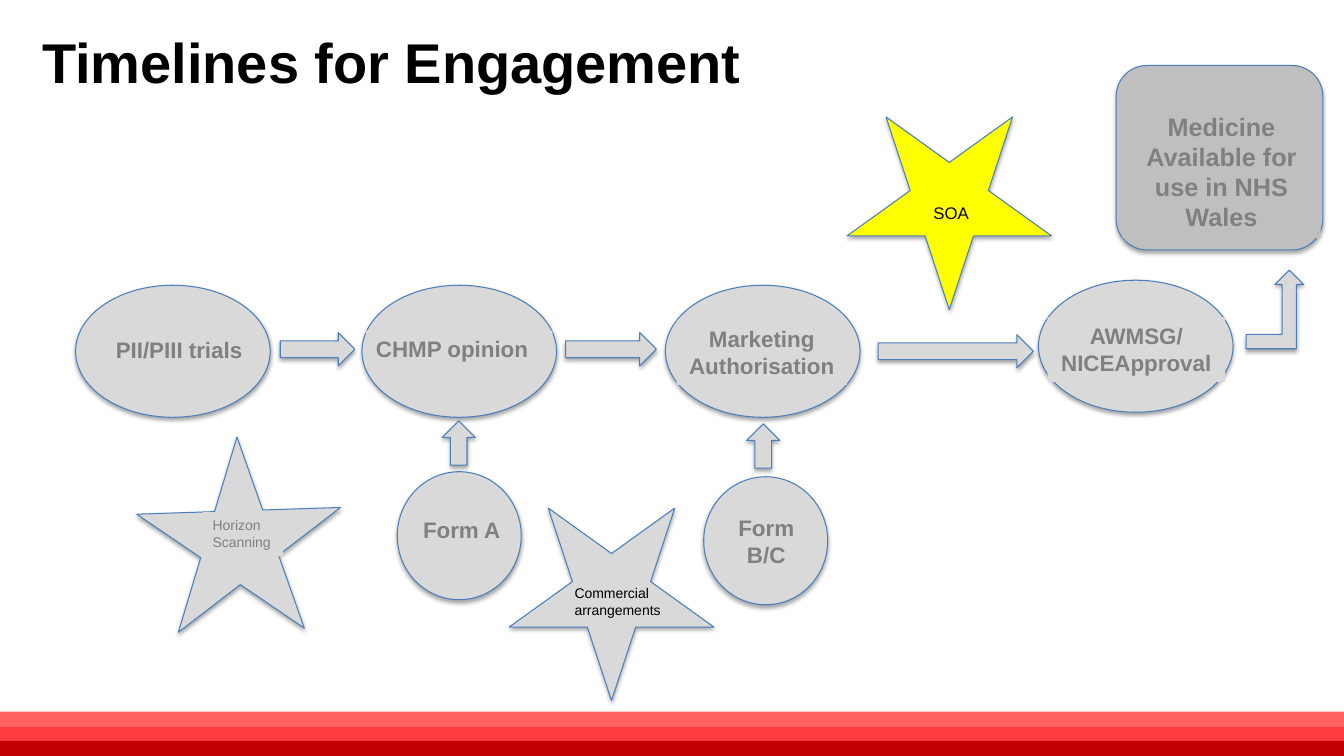
from dataclasses import dataclass
from lxml.etree import SubElement
from pptx import Presentation
from pptx.dml.color import RGBColor as Color
from pptx.enum.shapes import MSO_SHAPE as Kind
from pptx.enum.text import MSO_ANCHOR as Anchor, PP_ALIGN as Align
from pptx.oxml.ns import qn
from pptx.util import Inches, Pt


@dataclass(frozen=True)
class Theme:
    """Colours and type sizes of the slide."""
    font: str = "Arial"
    black: str = "000000"
    text: str = "808080"
    pale: str = "D9D9D9"
    grey: str = "BFBFBF"
    alert: str = "FFFF00"
    edge: str = "4B7EBC"
    bands: tuple = ("FF6161", "FF3F3F", "C00000")
    title: int = 40
    large: int = 18
    body: int = 16
    note: int = 12
    small: int = 10


class Board:
    """Draws styled elements on the current slide."""

    def __init__(self, slide, theme):
        self.shapes, self.theme = slide.shapes, theme

    def plain(self, kind, box, fill):
        shape = self.shapes.add_shape(kind, *map(Inches, box))
        shape.shadow.inherit = False
        shape.fill.solid()
        shape.fill.fore_color.rgb = Color.from_string(fill)
        shape.line.fill.background()
        return shape

    def form(self, kind, box, fill=None, turn=0):
        shape = self.plain(kind, box, fill or self.theme.pale)
        shape.line.color.rgb = Color.from_string(self.theme.edge)
        shape.line.width = Pt(0.75)
        shape.rotation = turn
        self.shade(shape)
        return shape

    def shade(self, shape):
        effect = shape._element.spPr.find(qn("a:effectLst"))
        shadow = SubElement(effect, qn("a:outerShdw"), blurRad=str(Pt(3.1)),
                            dist=str(Pt(1.8)), dir="5400000", rotWithShape="0")
        color = SubElement(shadow, qn("a:srgbClr"), val=self.theme.black)
        SubElement(color, qn("a:alpha"), val="35000")

    def label(self, text, box, size, fill=None, color=None, bold=True,
              align=Align.LEFT, anchor=Anchor.TOP):
        if fill:
            shape = self.plain(Kind.RECTANGLE, box, fill)
        else:
            shape = self.shapes.add_textbox(*map(Inches, box))
        frame = shape.text_frame
        frame.word_wrap = True
        frame.vertical_anchor = anchor
        frame.text = text
        for para in frame.paragraphs:
            para.alignment = align
            font = para.font
            font.name, font.size, font.bold = self.theme.font, Pt(size), bold
            font.color.rgb = Color.from_string(color or self.theme.text)


def main():
    """Build the engagement timeline."""
    deck = Presentation()
    deck.slide_width, deck.slide_height = Inches(13.33), Inches(7.5)
    theme = Theme()
    board = Board(deck.slides.add_slide(deck.slide_layouts[6]), theme)

    for row, fill in enumerate(theme.bands):
        board.plain(Kind.RECTANGLE, (0, 7.06 + 0.145 * row, 13.33, 0.15), fill)
    board.label("Timelines for Engagement", (0.32, 0.19, 7.16, 0.83),
                theme.title, color=theme.black, anchor=Anchor.MIDDLE)

    for left, top, fill, turn in ((1.42, 4.52, theme.pale, 142.4),
                                  (5.05, 5.04, theme.pale, 180),
                                  (8.4, 1.16, theme.alert, 180)):
        board.form(Kind.STAR_5_POINT, (left, top, 2.03, 1.91), fill, turn)
    for left, top in ((3.94, 4.68), (6.98, 4.73)):
        board.form(Kind.OVAL, (left, top, 1.23, 1.27))
    for left, top in ((0.75, 2.83), (3.59, 2.83), (6.6, 2.83), (10.3, 2.78)):
        board.form(Kind.OVAL, (left, top, 1.93, 1.31))
    board.form(Kind.ROUNDED_RECTANGLE, (11.07, 0.65, 2.05, 1.83), theme.grey)

    for left, top, width, turn in ((2.78, 3.3, 0.74, 0), (5.61, 3.3, 0.9, 0),
                                   (8.71, 3.32, 1.54, 0),
                                   (4.33, 4.23, 0.44, 270),
                                   (7.35, 4.26, 0.44, 270)):
        board.form(Kind.RIGHT_ARROW, (left, top, width, 0.33), turn=turn)
    board.form(Kind.BENT_UP_ARROW, (12.36, 2.68, 0.57, 0.78))

    for text, box, align in (
            ("PII/PIII trials", (1.05, 3.29, 1.55, 0.37), Align.LEFT),
            ("CHMP opinion", (3.63, 3.28, 1.85, 0.37), Align.LEFT),
            ("Marketing Authorisation", (6.71, 3.18, 1.69, 0.64), Align.CENTER),
            ("AWMSG/NICEApproval", (10.39, 3.15, 1.76, 0.64), Align.CENTER),
            ("Form A", (4.05, 5.07, 1.06, 0.37), Align.CENTER),
            ("Form B/C", (7.08, 5.05, 1.04, 0.64), Align.CENTER)):
        board.label(text, box, theme.body, theme.pale, align=align)
    board.label("Medicine Available for use in NHS Wales",
                (11.13, 1.05, 1.97, 1.31), theme.large, theme.grey,
                align=Align.CENTER)
    board.label("Horizon\nScanning", (2.01, 5.08, 0.8, 0.44), theme.small,
                theme.pale, bold=False)
    board.label("Commercial\narrangements", (5.6, 5.75, 1.1, 0.44),
                theme.small, color=theme.black, bold=False)
    board.label("SOA", (9.16, 1.96, 1.06, 0.3), theme.note,
                color=theme.black, bold=False)
    deck.save("out.pptx")


if __name__ == "__main__":
    main()
